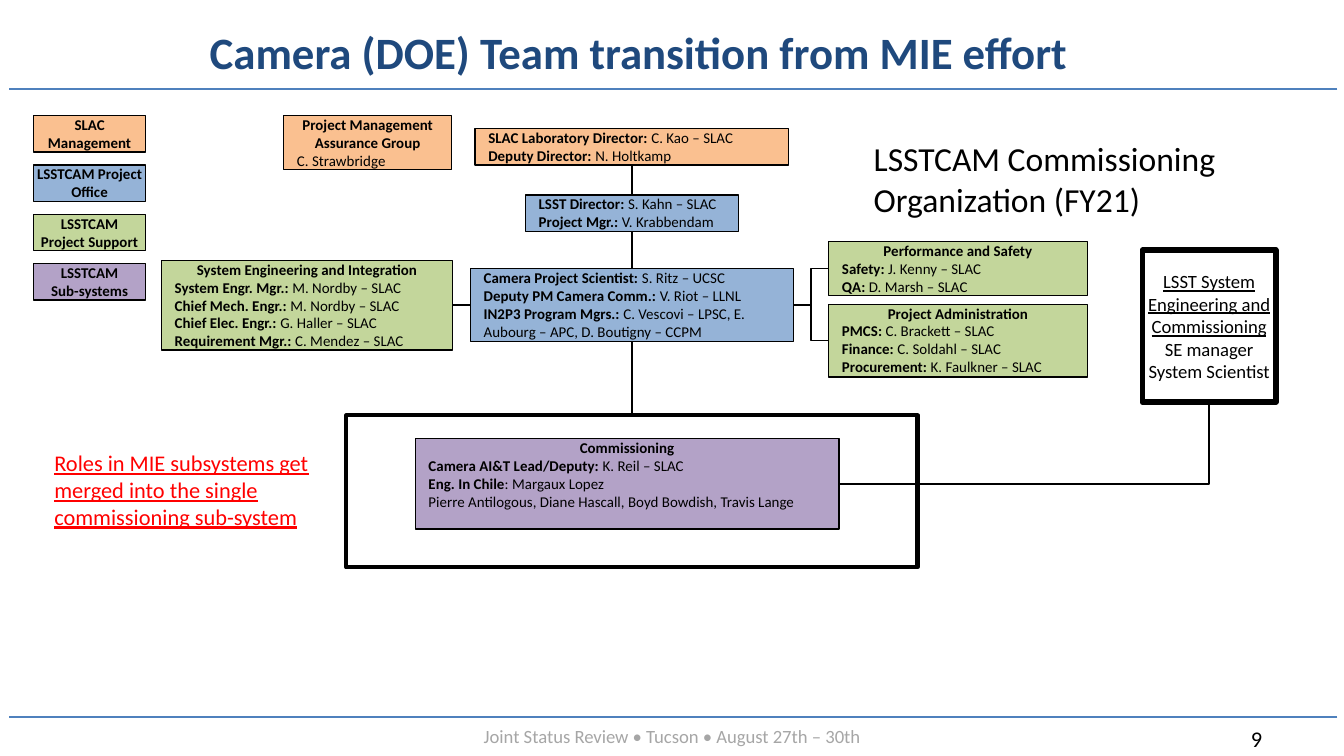
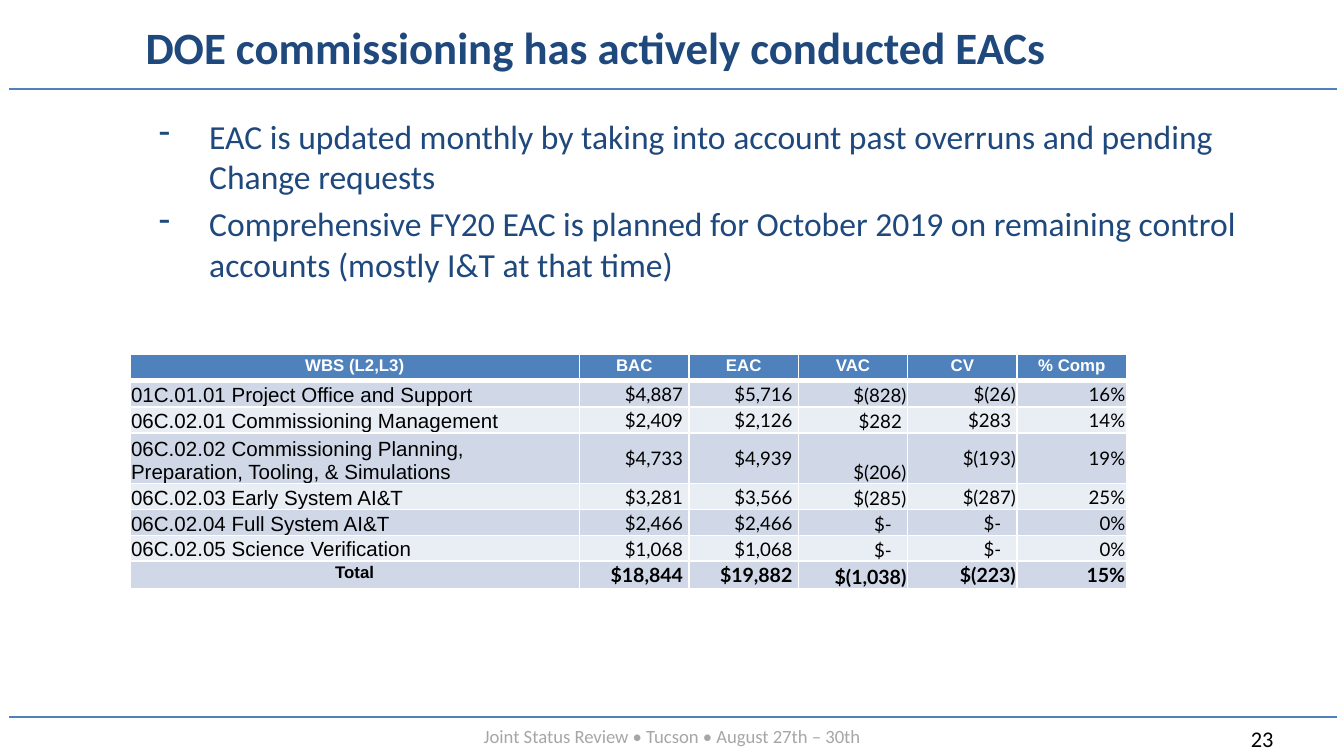
"""Build two review slides: the camera commissioning organization and the EAC table."""
from lxml.etree import SubElement
from pptx import Presentation
from pptx.dml.color import RGBColor
from pptx.enum.shapes import MSO_CONNECTOR as LINK, MSO_SHAPE
from pptx.enum.text import MSO_ANCHOR as ANCHOR, PP_ALIGN as ALIGN
from pptx.oxml.ns import qn
from pptx.util import Pt

rgb = RGBColor.from_string
BLACK, WHITE, GREY, RED = "000000", "FFFFFF", "A6A6A6", "FF0000"
NAVY, BLUE = "1F497D", "4F81BD"
MANAGEMENT, OFFICE, SUPPORT, SUBSYSTEM = "FAC090", "95B3D7", "C3D69B", "B3A2C7"
BANDS = ["D0D8E8", "E9EDF4"]


def write(tf, runs, size, color, align=ALIGN.LEFT, font="Calibri"):
    """Add one paragraph of (text, style) runs, where style may hold b and u."""
    p = tf.paragraphs[0]
    if p.runs:
        p = tf.add_paragraph()
    p.alignment = align
    for text, style in runs:
        r = p.add_run()
        r.text = text
        r.font.name, r.font.size = font, Pt(size)
        r.font.bold, r.font.underline = "b" in style, "u" in style
        r.font.color.rgb = rgb(color)
    return p


def text_box(s, x, y, w, h, anchor=ANCHOR.TOP):
    """Add a wrapping text box and return its text frame."""
    tf = s.shapes.add_textbox(Pt(x), Pt(y), Pt(w), Pt(h)).text_frame
    tf.word_wrap = True
    tf.vertical_anchor = anchor
    return tf


prs = Presentation()
prs.slide_width, prs.slide_height = Pt(720), Pt(405)

titles = [
    ("9", "Camera (DOE) Team transition from MIE effort", (102, 11, 480, 33)),
    ("23", "DOE commissioning has actively conducted EACs", (69, 8.5, 500, 33)),
]
for number, title, frame in titles:
    s = prs.slides.add_slide(prs.slide_layouts[6])
    for y in (384, 47.5):
        rule = s.shapes.add_connector(LINK.STRAIGHT, Pt(716.5), Pt(y), Pt(5), Pt(y))
        rule.line.color.rgb = rgb(BLUE)
        rule.line.width = Pt(1)
    write(text_box(s, 663, 385, 45, 22), [(number, "")], 12, BLACK)
    write(text_box(s, 36, 385, 648, 19.5),
          [("Joint Status Review • Tucson • August 27th – 30th", "")], 10, GREY, ALIGN.CENTER)
    write(text_box(s, *frame, ANCHOR.MIDDLE), [(title, "b")], 24, NAVY, ALIGN.CENTER)

org, eac = prs.slides

boxes = [
    ("scientist", (252, 144, 173, 39), OFFICE, [
        "Camera Project Scientist: |S. Ritz – UCSC",
        "Deputy PM Camera Comm.: |V. Riot – LLNL",
        "IN2P3 Program Mgrs.: |C. Vescovi – LPSC, E. Aubourg – APC, D. Boutigny – CCPM"]),
    ("director", (281.5, 104.5, 114, 19.5), OFFICE, [
        "LSST Director: |S. Kahn – SLAC",
        "Project Mgr.: |V. Krabbendam"]),
    ("safety", (444, 129.5, 138.5, 29), SUPPORT, [
        "Performance and Safety",
        "Safety: |J. Kenny – SLAC",
        "QA: |D. Marsh – SLAC"]),
    ("admin", (444, 163, 138.5, 39), SUPPORT, [
        "Project Administration",
        "PMCS: |C. Brackett – SLAC",
        "Finance: |C. Soldahl – SLAC",
        "Procurement: |K. Faulkner – SLAC"]),
    ("commissioning", (222.5, 235, 227, 48.5), SUBSYSTEM, [
        "Commissioning",
        "Camera AI&T Lead/Deputy: |K. Reil – SLAC",
        "Eng. In Chile|: Margaux Lopez",
        "|Pierre Antilogous, Diane Hascall, Boyd Bowdish, Travis Lange"]),
    ("engineering", (86.5, 139.5, 156, 48), SUPPORT, [
        "System Engineering and Integration",
        "System Engr. Mgr.: |M. Nordby – SLAC",
        "Chief Mech. Engr.: |M. Nordby – SLAC",
        "Chief Elec. Engr.: |G. Haller – SLAC",
        "Requirement Mgr.: |C. Mendez – SLAC"]),
    ("frame", (185.5, 222.5, 306, 81.5), None, []),
    ("laboratory", (254.5, 69, 168, 19.5), MANAGEMENT, [
        "SLAC Laboratory Director: |C. Kao – SLAC",
        "Deputy Director: |N. Holtkamp"]),
    ("assurance", (152, 62, 90, 29), MANAGEMENT, [
        "Project Management Assurance Group",
        "|C. Strawbridge"]),
    ("system", (612, 134, 71.5, 81.5), WHITE, []),
]
legend = [
    (MANAGEMENT, ["SLAC Management"]),
    (OFFICE, ["LSSTCAM Project Office"]),
    (SUPPORT, ["LSSTCAM", "Project Support"]),
    (SUBSYSTEM, ["LSSTCAM", "Sub-systems"]),
]
for i, (fill, lines) in enumerate(legend):
    boxes.append((f"legend {i}", (18, 62 + 26.4 * i, 60, 19.5), fill, lines))

weights = {"frame": 2.25, "system": 3}
placed = {}
for name, frame, fill, lines in boxes:
    sp = org.shapes.add_shape(MSO_SHAPE.RECTANGLE, *map(Pt, frame))
    sp.shadow.inherit = False
    if fill:
        sp.fill.solid()
        sp.fill.fore_color.rgb = rgb(fill)
    else:
        sp.fill.background()
    sp.line.color.rgb = rgb(BLACK)
    sp.line.width = Pt(weights.get(name, 0.75))
    tf = sp.text_frame
    tf.word_wrap = True
    tf.vertical_anchor = ANCHOR.TOP
    tf.margin_top = tf.margin_bottom = 0
    tf.margin_left = tf.margin_right = Pt(0 if name == "system" or "legend" in name else 7.2)
    for line in lines:
        label, bar, value = line.partition("|")
        runs = [(text, style) for text, style in ((label, "b"), (value, "")) if text]
        write(tf, runs, 8, BLACK, ALIGN.LEFT if bar else ALIGN.CENTER)
    placed[name] = sp

tf = placed["system"].text_frame
tf.vertical_anchor = ANCHOR.MIDDLE
for text, style in [("LSST System Engineering and Commissioning", "u"),
                    ("SE manager", ""), ("System Scientist", "")]:
    write(tf, [(text, style)], 10, BLACK, ALIGN.CENTER)

links = [
    ("laboratory", 2, "director", 0, LINK.STRAIGHT),
    ("director", 2, "scientist", 0, LINK.STRAIGHT),
    ("engineering", 3, "scientist", 1, LINK.STRAIGHT),
    ("scientist", 3, "safety", 1, LINK.ELBOW),
    ("scientist", 3, "admin", 1, LINK.ELBOW),
    ("scientist", 2, "frame", 0, LINK.STRAIGHT),
    ("commissioning", 3, "system", 2, LINK.ELBOW),
]
for start, start_side, end, end_side, kind in links:
    link = org.shapes.add_connector(kind, 0, 0, 0, 0)
    link.begin_connect(placed[start], start_side)
    link.end_connect(placed[end], end_side)
    link.line.color.rgb = rgb(BLACK)
    link.line.width = Pt(0.75)
    if end == "system":
        link._element.spPr.find(qn("a:prstGeom")).set("prst", "bentConnector2")

write(text_box(org, 461, 70.5, 235, 51),
      [("LSSTCAM Commissioning Organization (FY21)", "")], 18, BLACK)
write(text_box(org, 22, 237, 156, 51),
      [("Roles in MIE subsystems get merged into the single commissioning sub-system", "u")],
      12, RED)

tf = text_box(eac, 78, 58.5, 606, 102)
bullets = [
    "EAC is updated monthly by taking into account past overruns and pending Change requests",
    "Comprehensive FY20 EAC is planned for October 2019 on remaining control accounts "
    "(mostly I&T at that time)",
]
for i, text in enumerate(bullets):
    p = write(tf, [(text, "")], 18, NAVY)
    p.space_before = Pt(3.6 if i else 0)
    pPr = p._p.get_or_add_pPr()
    pPr.set("marL", str(Pt(27)))
    pPr.set("indent", str(Pt(-27)))
    SubElement(pPr, qn("a:buChar")).set("char", "-")

rows = [
    ["WBS (L2,L3)", "BAC", "EAC", "VAC", "CV", "% Comp"],
    ["01C.01.01 Project Office and Support", "$4,887", "$5,716", "$(828)", "$(26)", "16%"],
    ["06C.02.01 Commissioning Management", "$2,409", "$2,126", "$282", "$283", "14%"],
    ["06C.02.02 Commissioning Planning, Preparation, Tooling, & Simulations",
     "$4,733", "$4,939", "$(206)", "$(193)", "19%"],
    ["06C.02.03 Early System AI&T", "$3,281", "$3,566", "$(285)", "$(287)", "25%"],
    ["06C.02.04 Full System AI&T", "$2,466", "$2,466", "$-", "$-", "0%"],
    ["06C.02.05 Science Verification", "$1,068", "$1,068", "$-", "$-", "0%"],
    ["Total", "$18,844", "$19,882", "$(1,038)", "$(223)", "15%"],
]
last = len(rows) - 1
table = eac.shapes.add_table(len(rows), 6, Pt(69.5), Pt(189.5), Pt(534), Pt(125)).table
for c, column in enumerate(table.columns):
    column.width = Pt(58.6 if c else 241)
for i, row in enumerate(rows):
    table.rows[i].height = Pt(14.5 if i in (0, last) else 11)
    for c, text in enumerate(row):
        cell = table.cell(i, c)
        heading = i == 0 or (i == last and c == 0)
        cell.margin_left = cell.margin_top = cell.margin_right = Pt(0.7)
        cell.margin_bottom = Pt(2.9 if heading else 0)
        low = not heading and c in (0, 3)
        cell.vertical_anchor = ANCHOR.BOTTOM if low else ANCHOR.MIDDLE
        tcPr = cell._tc.get_or_add_tcPr()
        for side in "LRTB":
            thick = (i, side) in ((0, "B"), (1, "T"))
            ln = SubElement(tcPr, qn(f"a:ln{side}"), w=str(Pt(3 if thick else 1)))
            SubElement(SubElement(ln, qn("a:solidFill")), qn("a:srgbClr"), val=WHITE)
        cell.fill.solid()
        cell.fill.fore_color.rgb = rgb(BANDS[(i - 1) % 2] if i else BLUE)
        tf = cell.text_frame
        if heading:
            write(tf, [(text, "b")], 9, BLACK if i else WHITE, ALIGN.CENTER, "Arial")
        elif c == 0:
            write(tf, [(text, "")], 11, BLACK, font="Arial")
        else:
            if text[-1] not in ")%":
                cell.margin_right = Pt(8.5 if text == "$-" else 3.2)
            total = i == last
            write(tf, [(text, "b" if total else "")], 10.5 if total else 10,
                  BLACK, ALIGN.RIGHT, "Lato")

for s in prs.slides:
    for line in s._element.iter(qn("p:cxnSp")):
        SubElement(line.spPr, qn("a:effectLst"))

prs.save("out.pptx")
